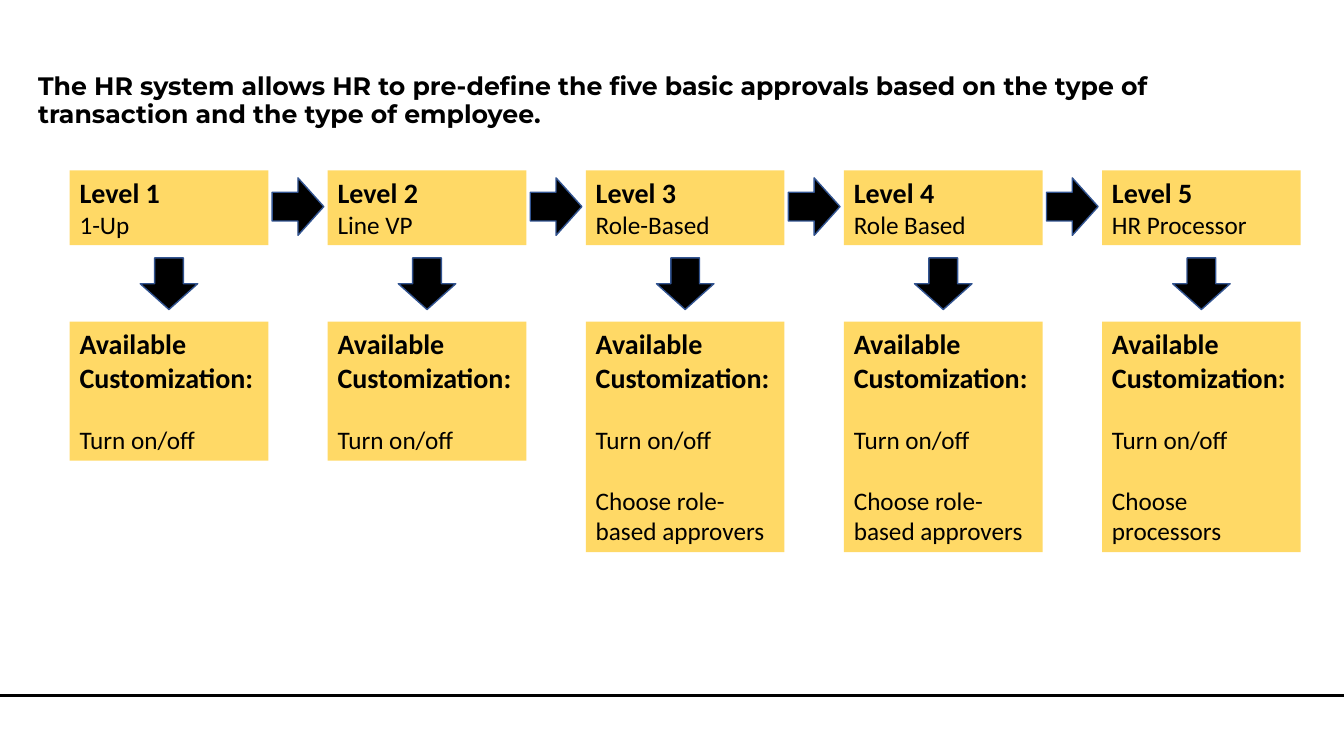
from pptx import Presentation
from pptx.dml.color import RGBColor
from pptx.enum.shapes import MSO_CONNECTOR, MSO_SHAPE
from pptx.enum.text import MSO_ANCHOR, MSO_AUTO_SIZE, PP_ALIGN
from pptx.oxml.ns import qn
from pptx.util import Inches, Pt

BLACK, GOLD, BLUE = "000000", "FFD966", "325491"


def rgb(value):
    return RGBColor.from_string(value)


class Deck:
    left, top = 0.69, 1.69
    col_width, row_height = 2.56, 0.75
    heading = {"name": "Calibri", "size": Pt(20), "bold": True}
    body = {"name": "Calibri", "size": Pt(18), "bold": False}
    title_font = {"name": "Montserrat", "size": Pt(18), "bold": True}

    def __init__(self):
        self.prs = Presentation()
        self.prs.slide_width = Inches(13.33)
        self.prs.slide_height = Inches(7.5)
        self.s = self.prs.slides.add_slide(self.prs.slide_layouts[6])

    def share(self, x, y):
        return int(self.prs.slide_width * x), int(self.prs.slide_height * y)

    def cell(self, col, row, cols, rows):
        return (Inches(self.left + col * self.col_width),
                Inches(self.top + row * self.row_height),
                Inches(cols * self.col_width),
                Inches(rows * self.row_height))

    def add_text(self, p, text, style):
        r = p.add_run()
        r.text = text
        for key, value in style.items():
            setattr(r.font, key, value)
        r.font.color.rgb = rgb(BLACK)

    def title(self, text, x, y, w, h):
        sp = self.s.shapes.add_textbox(*self.share(x, y), *self.share(w, h))
        tf = sp.text_frame
        tf.word_wrap = True
        tf.vertical_anchor = MSO_ANCHOR.MIDDLE
        p = tf.paragraphs[0]
        p.line_spacing = 0.9
        self.add_text(p, text, self.title_font)

    def rule(self, y):
        line = self.s.shapes.add_connector(
            MSO_CONNECTOR.STRAIGHT, *self.share(0, y), *self.share(1, y))
        line.line.color.rgb = rgb(BLACK)
        line.line.width = Pt(2)
        sp_pr = line._element.spPr
        sp_pr.append(sp_pr.makeelement(qn("a:effectLst"), {}))

    def shape(self, kind, place, fill):
        sp = self.s.shapes.add_shape(kind, *place)
        sp.shadow.inherit = False
        sp.fill.solid()
        sp.fill.fore_color.rgb = rgb(fill)
        return sp

    def box(self, col, row, rows, heading, lines, gap=0):
        place = self.cell(col, row, 0.77, rows)
        sp = self.shape(MSO_SHAPE.RECTANGLE, place, GOLD)
        sp.line.fill.background()
        tf = sp.text_frame
        tf.word_wrap = True
        tf.auto_size = MSO_AUTO_SIZE.SHAPE_TO_FIT_TEXT
        tf.vertical_anchor = MSO_ANCHOR.TOP
        p = tf.paragraphs[0]
        p.alignment = PP_ALIGN.LEFT
        self.add_text(p, heading, self.heading)
        for text in lines:
            p = tf.add_paragraph()
            p.alignment = PP_ALIGN.LEFT
            p.space_before = Pt(gap)
            self.add_text(p, text, self.body)

    def arrow(self, mid_col, mid_row, rotation=0):
        cols, rows = 0.2, 0.76
        place = self.cell(mid_col - cols / 2, mid_row - rows / 2, cols, rows)
        sp = self.shape(MSO_SHAPE.RIGHT_ARROW, place, BLACK)
        sp.line.color.rgb = rgb(BLUE)
        sp.line.width = Pt(1)
        sp.rotation = rotation


def main():
    levels = [
        ("1-Up", []),
        ("Line VP", []),
        ("Role-Based", ["Choose role-based approvers"]),
        ("Role Based", ["Choose role-based approvers"]),
        ("HR Processor", ["Choose processors"]),
    ]
    deck = Deck()
    deck.rule(0.92)
    deck.title("The HR system allows HR to pre-define the five basic approvals "
               "based on the type of transaction and the type of employee.",
               0.021, 0.096, 0.94, 0.076)
    for col, (approver, choices) in enumerate(levels):
        deck.box(col, 0, 0.99, f"Level {col + 1}", [approver])
        deck.box(col, 2, 3.05 if choices else 1.84, "Available Customization:",
                 ["Turn on/off", *choices], gap=22)
        deck.arrow(col + 0.385, 1.5, rotation=90)
        if col < len(levels) - 1:
            deck.arrow(col + 0.885, 0.48)
    deck.prs.save("out.pptx")


if __name__ == "__main__":
    main()
